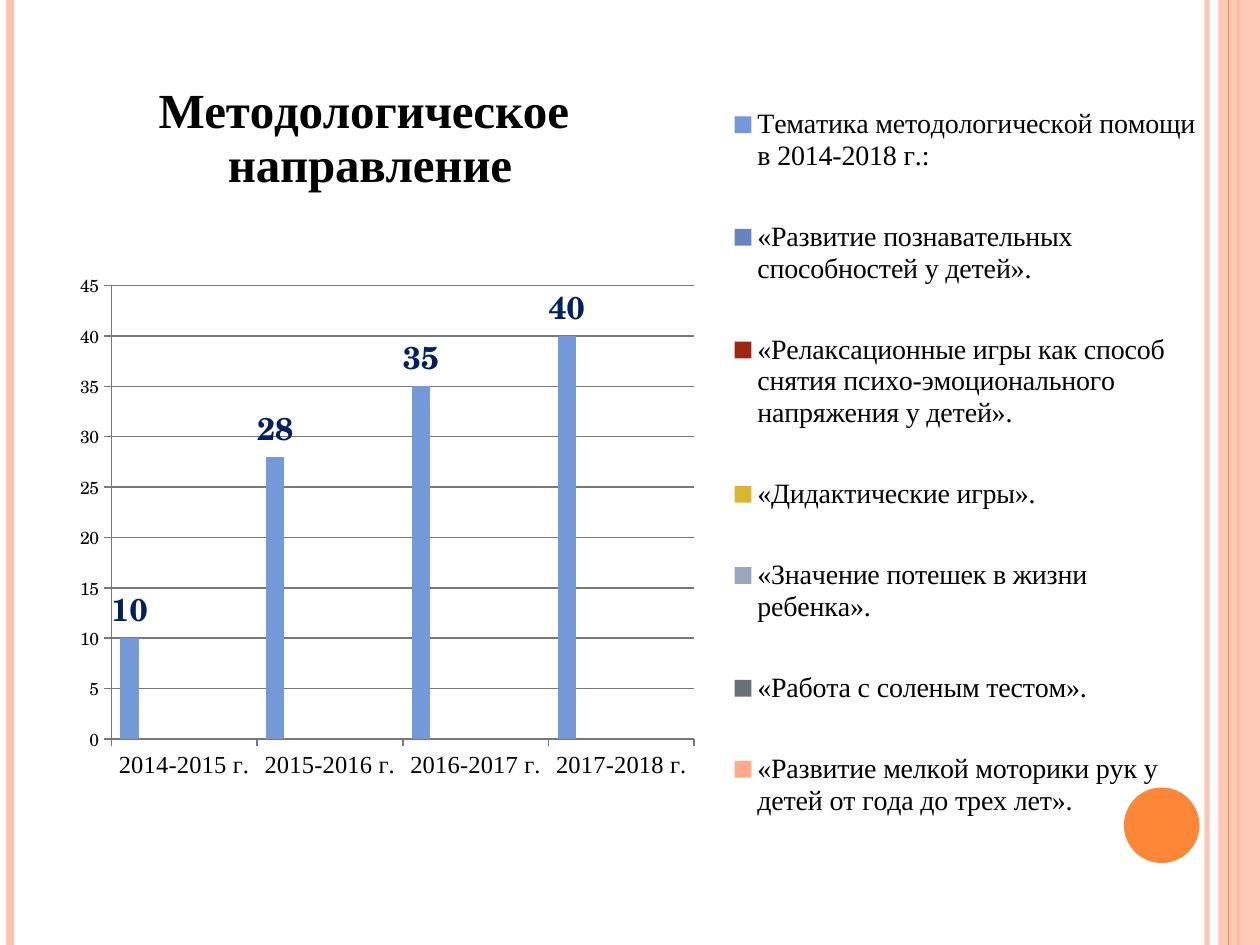
from lxml.etree import SubElement
from pptx import Presentation
from pptx.chart.data import CategoryChartData
from pptx.dml.color import RGBColor
from pptx.enum.chart import XL_CHART_TYPE, XL_LABEL_POSITION, XL_LEGEND_POSITION, XL_TICK_MARK
from pptx.enum.shapes import MSO_CONNECTOR, MSO_SHAPE
from pptx.oxml import parse_xml
from pptx.oxml.ns import nsdecls, qn
from pptx.util import Inches, Pt

SERIF = "Times New Roman"
PEACH, ORANGE, GREY = "FEC3AE", "FE8637", "787878"
YEARS = ["2014-2015 г.", "2015-2016 г.", "2016-2017 г.", "2017-2018 г."]
COUNTS = [10, 28, 35, 40]
TITLE = "Методологическое \nнаправление"
TOPICS = [
    ("Тематика методологической помощи в 2014-2018 г.:", "7598D9"),
    ("«Развитие познавательных способностей у детей».", "6685C0"),
    ("«Релаксационные игры как способ снятия психо-эмоционального напряжения у детей».", "A02513"),
    ("«Дидактические игры».", "DBB62B"),
    ("«Значение потешек в жизни ребенка».", "9BA6BE"),
    ("«Работа с соленым тестом».", "6A6E75"),
    ("«Развитие мелкой моторики рук у детей от года до трех лет».", "FFAA88"),
]


def color(hex_string):
    return RGBColor.from_string(hex_string)


def style(target, **values):
    for name, value in values.items():
        setattr(target, name, value)


def set_opacity(fill, percent):
    color_node = fill._xPr.find(".//" + qn("a:srgbClr"))
    SubElement(color_node, qn("a:alpha"), val=str(percent * 1000))


def add_rule(page, x, height, hex_string, width, opacity=100):
    rule = page.shapes.add_connector(MSO_CONNECTOR.STRAIGHT, Inches(x), 0, Inches(x), Inches(height))
    rule.line.width = Pt(width)
    rule.line.color.rgb = color(hex_string)
    if opacity < 100:
        set_opacity(rule.line.fill, opacity)
    SubElement(rule._element.spPr, qn("a:effectLst"))


def add_filled(page, kind, box, hex_string, opacity=100):
    shape = page.shapes.add_shape(kind, *map(Inches, box))
    shape.shadow.inherit = False
    shape.fill.solid()
    shape.fill.fore_color.rgb = color(hex_string)
    shape.line.fill.background()
    if opacity < 100:
        set_opacity(shape.fill, opacity)


def add_frame(page, width, height):
    """Draw the vertical stripes at both page edges and the corner disc."""
    add_rule(page, width - 0.42, height, PEACH, 3, 93)
    add_rule(page, 0.08, height, PEACH, 4.5)
    add_rule(page, width - 0.17, height, ORANGE, 1.5)
    add_filled(page, MSO_SHAPE.RECTANGLE, (width - 0.33, 0, 0.33, height), PEACH, 87)
    add_rule(page, width - 0.25, height, ORANGE, 0.75)
    add_filled(page, MSO_SHAPE.OVAL, (width - 1.08, height - 1.25, 0.6, 0.6), ORANGE)


def set_layout(part, index, inner=False, **fractions):
    """Place a chart part by fractions of the chart's own box."""
    for old in part.findall(qn("c:layout")):
        part.remove(old)
    target = '<c:layoutTarget val="inner"/>' if inner else ""
    modes = "".join(f'<c:{name}Mode val="edge"/>' for name in "xy")
    sizes = "".join(f'<c:{name} val="{value}"/>' for name, value in fractions.items())
    part.insert(index, parse_xml(
        f'<c:layout {nsdecls("c")}><c:manualLayout>{target}{modes}{sizes}</c:manualLayout></c:layout>'))


def format_title(chart):
    frame = chart.chart_title.text_frame
    frame.text = TITLE
    for para in frame.paragraphs:
        for span in para.runs:
            style(span.font, name=SERIF, size=Pt(28), bold=True)
    set_layout(chart.chart_title._element, 1, x=0.078, y=0.024)


def format_axes(chart):
    values, years = chart.value_axis, chart.category_axis
    style(values, minimum_scale=0, maximum_scale=45, major_unit=5, has_major_gridlines=True)
    style(years.tick_labels.font, name=SERIF, size=Pt(14))
    for axis in (values, years):
        axis.major_tick_mark = XL_TICK_MARK.OUTSIDE
    for line in (values.format.line, years.format.line, values.major_gridlines.format.line):
        line.width = Pt(0.85)
        line.color.rgb = color(GREY)


def format_series(chart):
    plot = chart.plots[0]
    style(plot, gap_width=100, overlap=0, vary_by_categories=False)
    for series, (_, hex_string) in zip(plot.series, TOPICS):
        series.format.fill.solid()
        series.format.fill.fore_color.rgb = color(hex_string)
    labels = plot.series[0].data_labels
    style(labels, show_value=True, position=XL_LABEL_POSITION.OUTSIDE_END)
    style(labels.font, size=Pt(18), bold=True)
    labels.font.color.rgb = color("002060")


def format_legend(chart):
    chart.has_legend = True
    style(chart.legend, position=XL_LEGEND_POSITION.RIGHT, include_in_layout=False)
    style(chart.legend.font, name=SERIF, size=Pt(16))
    set_layout(chart.legend._element, 1, x=0.585, y=0, w=0.41, h=0.984)


def add_topics_chart(page, box):
    chart_data = CategoryChartData()
    chart_data.categories = YEARS
    for index, (name, _) in enumerate(TOPICS):
        chart_data.add_series(name, COUNTS if index == 0 else [None] * len(YEARS))
    chart = page.shapes.add_chart(XL_CHART_TYPE.COLUMN_CLUSTERED, *map(Inches, box), chart_data).chart
    style(chart.font, name="TeX Gyre Schola", size=Pt(10))
    chart.font.color.rgb = color("000000")
    format_title(chart)
    format_axes(chart)
    format_series(chart)
    format_legend(chart)
    plot_area = chart._chartSpace.chart.plotArea
    set_layout(plot_area, 0, inner=True, x=0.04, y=0.276, w=0.509, h=0.553)


def main():
    width, height = 10, 7.5
    deck = Presentation()
    style(deck, slide_width=Inches(width), slide_height=Inches(height))
    page = deck.slides.add_slide(deck.slide_layouts[6])
    add_frame(page, width, height)
    add_topics_chart(page, (0.52, 0.47, 9.09, 6.51))
    deck.save("out.pptx")


if __name__ == "__main__":
    main()
